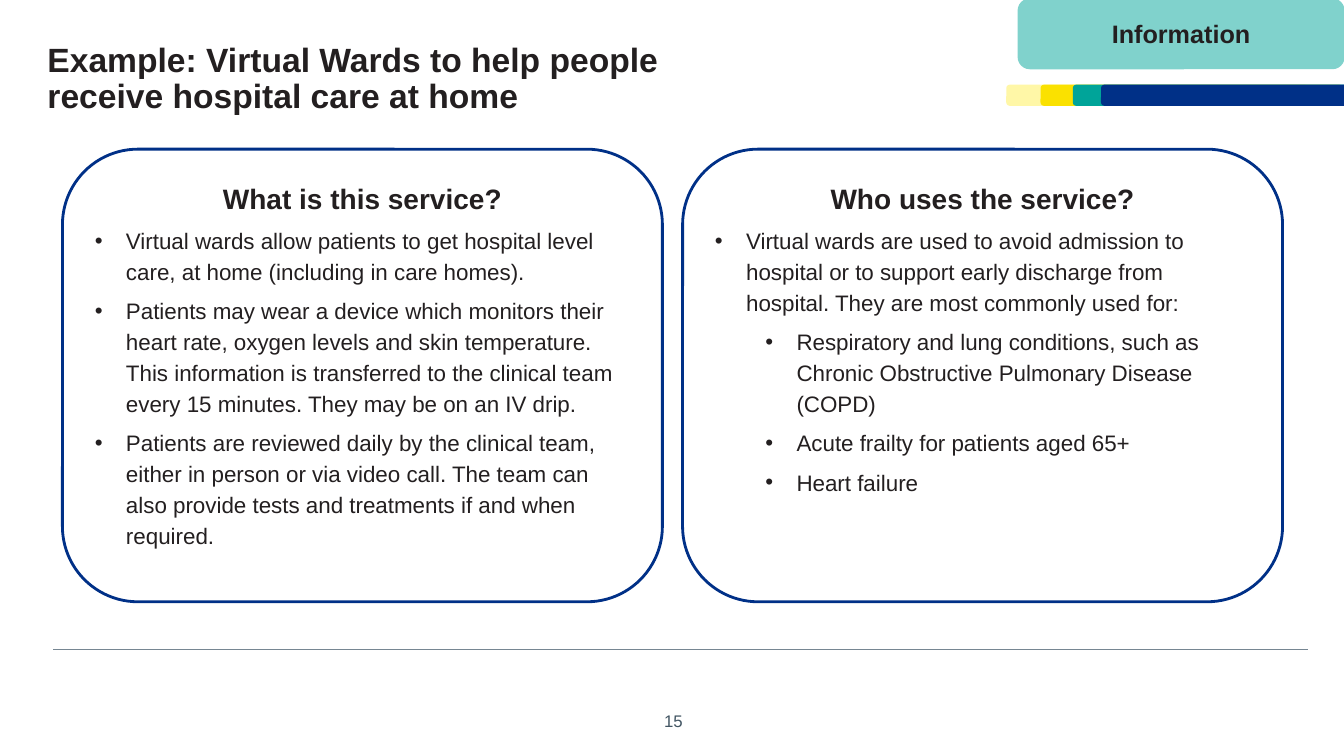
from dataclasses import dataclass

from lxml import etree
from pptx import Presentation
from pptx import util as u
from pptx.dml.color import RGBColor
from pptx.enum import shapes, text
from pptx.oxml import ns

WIDTH, HEIGHT = u.Inches(13.33), u.Inches(7.5)
FONT = "Arial"
INK = RGBColor(0x23, 0x1F, 0x20)
NAVY = RGBColor(0x00, 0x30, 0x87)
TEAL = RGBColor(0x00, 0xA4, 0x99)
YELLOW = RGBColor(0xFA, 0xE1, 0x00)
CREAM = RGBColor(0xFF, 0xF7, 0xA7)
MINT = RGBColor(0x80, 0xD2, 0xCC)
GREY = RGBColor(0x76, 0x86, 0x92)
SLATE = RGBColor(0x42, 0x55, 0x63)


@dataclass(frozen=True)
class Area:
    """Position and size in percent of the slide."""
    left: float
    top: float
    width: float
    height: float

    def emu(self) -> tuple[int, int, int, int]:
        return (across(self.left), down(self.top),
                across(self.width), down(self.height))

    def inset(self, side: float, end: float) -> "Area":
        return Area(self.left + side, self.top + end,
                    self.width - 2 * side, self.height - 2 * end)


@dataclass(frozen=True)
class Bar:
    left: float
    colour: RGBColor


@dataclass(frozen=True)
class Item:
    wording: str
    level: int = 0


@dataclass(frozen=True)
class Panel:
    heading: str
    items: tuple[Item, ...]


BARS = (Bar(74.87, CREAM), Bar(77.42, YELLOW), Bar(79.82, TEAL), Bar(81.92, NAVY))
PANELS = (
    Panel("What is this service?", (
        Item("Virtual wards allow patients to get hospital level care, at home "
             "(including in care homes)."),
        Item("Patients may wear a device which monitors their heart rate, oxygen "
             "levels and skin temperature. This information is transferred to the "
             "clinical team every 15 minutes. They may be on an IV drip."),
        Item("Patients are reviewed daily by the clinical team, either in person or "
             "via video call. The team can also provide tests and treatments if and "
             "when required."),
    )),
    Panel("Who uses the service?", (
        Item("Virtual wards are used to avoid admission to hospital or to support "
             "early discharge from hospital. They are most commonly used for:"),
        Item("Respiratory and lung conditions, such as Chronic Obstructive "
             "Pulmonary Disease (COPD)", 1),
        Item("Acute frailty for patients aged 65+", 1),
        Item("Heart failure", 1),
    )),
)
PANEL_LEFT, PANEL_PITCH = 4.65, 46.14


def across(percent: float) -> int:
    return round(WIDTH * percent / 100)


def down(percent: float) -> int:
    return round(HEIGHT * percent / 100)


def place(box, area: Area) -> None:
    box.left, box.top, box.width, box.height = area.emu()


def set_font(para, size: float, colour: RGBColor = INK, bold: bool = False) -> None:
    font = para.font
    font.name, font.size, font.bold = FONT, u.Pt(size), bold
    font.color.rgb = colour


def set_bullet(para, character: str, margin: float, hanging: float) -> None:
    properties = para._p.get_or_add_pPr()
    properties.set("marL", str(u.Inches(margin)))
    properties.set("indent", str(u.Inches(-hanging)))
    if character:
        etree.SubElement(properties, ns.qn("a:buChar"), char=character)
    else:
        etree.SubElement(properties, ns.qn("a:buNone"))


def add_rounded(page, area: Area, fill: RGBColor | None = None,
                line: RGBColor | None = None, weight: float = 1):
    box = page.shapes.add_shape(shapes.MSO_SHAPE.ROUNDED_RECTANGLE, *area.emu())
    box.shadow.inherit = False
    if fill is None:
        box.fill.background()
    else:
        box.fill.solid()
        box.fill.fore_color.rgb = fill
    if line is None:
        box.line.fill.background()
    else:
        box.line.color.rgb = line
        box.line.width = u.Pt(weight)
    return box


def add_rule(page) -> None:
    level = down(85.87)
    rule = page.shapes.add_connector(
        shapes.MSO_CONNECTOR.STRAIGHT, across(3.98), level, across(97.3), level)
    rule.line.color.rgb = GREY
    rule.line.width = u.Pt(0.5)
    etree.SubElement(rule._element.spPr, ns.qn("a:effectLst"))


def add_page_number(page) -> None:
    box = page.shapes.add_textbox(*Area(48.46, 93.33, 3.08, 4).emu())
    box.text_frame.word_wrap = False
    para = box.text_frame.paragraphs[0]
    para.text = "15"
    para.alignment = text.PP_ALIGN.RIGHT
    set_font(para, 12, SLATE)


def add_tag(page) -> None:
    tag = add_rounded(page, Area(75.77, -0.13, 24.23, 9.2), MINT, MINT)
    tag.text_frame.vertical_anchor = text.MSO_ANCHOR.MIDDLE
    para = tag.text_frame.paragraphs[0]
    para.text = "Information"
    para.alignment = text.PP_ALIGN.CENTER
    set_font(para, 18, bold=True)


def fill_title(title) -> None:
    place(title, Area(3.53, 5.73, 51.61, 12.27))
    frame = title.text_frame
    frame.auto_size = text.MSO_AUTO_SIZE.NONE
    frame.vertical_anchor = text.MSO_ANCHOR.TOP
    frame.margin_left = frame.margin_right = frame.margin_top = frame.margin_bottom = 0
    para = frame.paragraphs[0]
    para.text = "Example: Virtual Wards to help people receive hospital care at home"
    para.alignment = text.PP_ALIGN.LEFT
    para.line_spacing = 0.9
    set_font(para, 24, bold=True)


def fill_panel(page, body, panel: Panel, area: Area) -> None:
    add_rounded(page, area, line=NAVY, weight=2)
    place(body, area.inset(1.65, 2.93))
    page.shapes._spTree.append(body._element)
    frame = body.text_frame
    frame.auto_size = text.MSO_AUTO_SIZE.NONE
    heading = frame.paragraphs[0]
    heading.text = panel.heading
    set_bullet(heading, "", 0, 0)
    heading.alignment = text.PP_ALIGN.CENTER
    heading.line_spacing, heading.space_before = 1.15, u.Pt(0)
    set_font(heading, 20, bold=True)
    for item in panel.items:
        para = frame.add_paragraph()
        para.text, para.level = item.wording, item.level
        set_bullet(para, "•", 0.31 + 0.5 * item.level, 0.31)
        para.line_spacing, para.space_before = 1.15, u.Pt(6)
        set_font(para, 16)


def main() -> None:
    deck = Presentation()
    deck.slide_width, deck.slide_height = WIDTH, HEIGHT
    page = deck.slides.add_slide(deck.slide_layouts.get_by_name("Two Content"))
    title, *bodies = page.placeholders
    add_page_number(page)
    add_rule(page)
    for bar in BARS:
        add_rounded(page, Area(bar.left, 11.2, 22.51, 2.8), bar.colour)
    add_tag(page)
    fill_title(title)
    for column, (body, panel) in enumerate(zip(bodies, PANELS)):
        left = PANEL_LEFT + column * PANEL_PITCH
        fill_panel(page, body, panel, Area(left, 19.73, 44.64, 59.87))
    deck.save("out.pptx")


if __name__ == "__main__":
    main()
